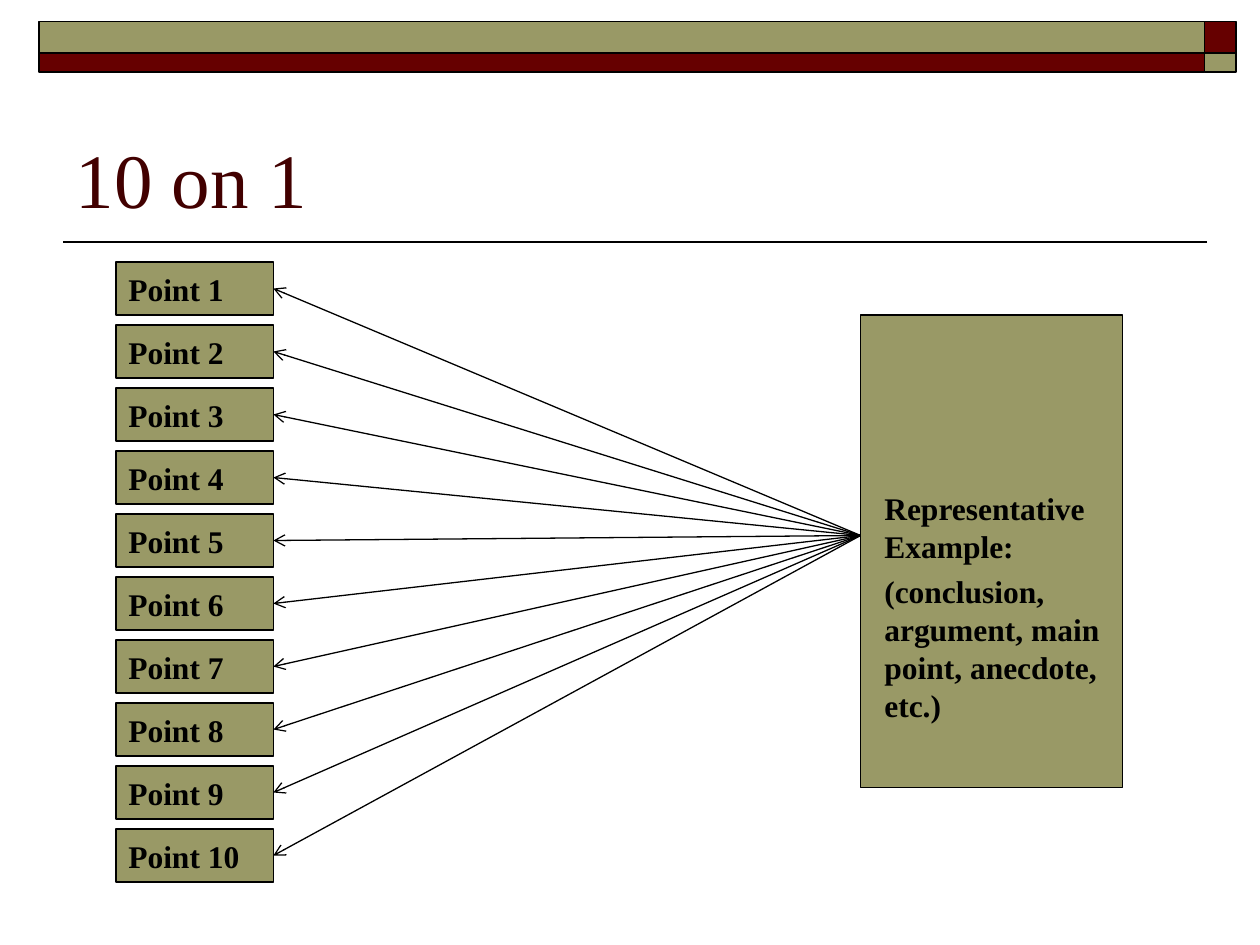
"""Build the "10 on 1" slide: ten points fanning out from one representative example."""

from typing import NamedTuple

import pptx
import pptx.dml.color
import pptx.enum.shapes
import pptx.enum.text
import pptx.oxml.ns
import pptx.shapes.autoshape
import pptx.shapes.connector
import pptx.slide
import pptx.text.text
import pptx.util
from lxml import etree
from pptx.util import Inches

OLIVE = pptx.dml.color.RGBColor(0x99, 0x99, 0x66)
MAROON = pptx.dml.color.RGBColor(0x66, 0x00, 0x00)
TITLE_MAROON = pptx.dml.color.RGBColor(0x42, 0x00, 0x00)
BLACK = pptx.dml.color.RGBColor(0x00, 0x00, 0x00)
FONT = "Times New Roman"
POINT_COUNT = 10
POINT_TOP = 2.08
POINT_PITCH = 0.5
FAN_ORIGIN = (6.83, 4.25)
ANCHOR = pptx.enum.text.MSO_ANCHOR


class Box(NamedTuple):
    left: float
    top: float
    width: float
    height: float


class Block(NamedTuple):
    box: Box
    fill: pptx.dml.color.RGBColor
    line_width: float


class Caption(NamedTuple):
    box: Box
    text: str
    anchor: pptx.enum.text.MSO_ANCHOR


BANNER = [
    Block(Box(9.56, 0.17, 0.25, 0.25), MAROON, 1),
    Block(Box(0.31, 0.17, 9.25, 0.25), OLIVE, 1),
    Block(Box(0.31, 0.42, 9.25, 0.15), MAROON, 1),
    Block(Box(9.56, 0.42, 0.25, 0.15), OLIVE, 1),
]
EXAMPLE_PANEL = Block(Box(6.83, 2.5, 2.08, 3.75), OLIVE, 0.75)
EXAMPLE_CAPTIONS = [
    Caption(
        Box(6.92, 4.17, 1.92, 1.62),
        "(conclusion, argument, main point, anecdote, etc.)",
        ANCHOR.BOTTOM,
    ),
    Caption(Box(6.92, 3.83, 1.92, 0.71), "Representative Example:", ANCHOR.TOP),
]


def write(
    frame: pptx.text.text.TextFrame,
    text: str,
    anchor: pptx.enum.text.MSO_ANCHOR,
    size: float = 18,
    color: pptx.dml.color.RGBColor = BLACK,
    bold: bool = True,
) -> None:
    frame.word_wrap = True
    frame.auto_size = pptx.enum.text.MSO_AUTO_SIZE.NONE
    frame.vertical_anchor = anchor
    paragraph = frame.paragraphs[0]
    paragraph.alignment = pptx.enum.text.PP_ALIGN.LEFT
    run = paragraph.add_run()
    run.text = text
    run.font.name = FONT
    run.font.size = pptx.util.Pt(size)
    run.font.bold = bold
    run.font.color.rgb = color


def draw_block(slide: pptx.slide.Slide, block: Block) -> pptx.shapes.autoshape.Shape:
    rectangle = slide.shapes.add_shape(
        pptx.enum.shapes.MSO_SHAPE.RECTANGLE, *map(Inches, block.box)
    )
    rectangle.shadow.inherit = False
    rectangle.fill.solid()
    rectangle.fill.fore_color.rgb = block.fill
    rectangle.line.color.rgb = BLACK
    rectangle.line.width = pptx.util.Pt(block.line_width)
    return rectangle


def draw_line(
    slide: pptx.slide.Slide,
    start: tuple[float, float],
    end: tuple[float, float],
    width: float,
) -> pptx.shapes.connector.Connector:
    line = slide.shapes.add_connector(
        pptx.enum.shapes.MSO_CONNECTOR.STRAIGHT, *map(Inches, start + end)
    )
    line.line.color.rgb = BLACK
    line.line.width = pptx.util.Pt(width)
    etree.SubElement(line._element.spPr, pptx.oxml.ns.qn("a:effectLst"))
    return line


def draw_arrow(slide: pptx.slide.Slide, point: pptx.shapes.autoshape.Shape) -> None:
    arrow = draw_line(slide, FAN_ORIGIN, FAN_ORIGIN, 0.75)
    arrow.end_connect(point, 3)
    outline = arrow.line._get_or_add_ln()
    etree.SubElement(outline, pptx.oxml.ns.qn("a:tailEnd"), type="arrow")


def draw_title(slide: pptx.slide.Slide, text: str) -> None:
    title = slide.shapes.title
    title.left, title.top = Inches(0.5), Inches(0.58)
    title.width, title.height = Inches(9), Inches(1.25)
    write(title.text_frame, text, ANCHOR.BOTTOM, 44, TITLE_MAROON, False)


def draw_point(slide: pptx.slide.Slide, index: int) -> pptx.shapes.autoshape.Shape:
    box = Box(0.92, POINT_TOP + index * POINT_PITCH, 1.25, 0.42)
    point = draw_block(slide, Block(box, OLIVE, 0.75))
    write(point.text_frame, f"Point {index + 1}", ANCHOR.MIDDLE)
    return point


def draw_caption(slide: pptx.slide.Slide, caption: Caption) -> None:
    textbox = slide.shapes.add_textbox(*map(Inches, caption.box))
    write(textbox.text_frame, caption.text, caption.anchor)


def main() -> None:
    presentation = pptx.Presentation()
    presentation.slide_width = Inches(10)
    presentation.slide_height = Inches(7.5)
    slide = presentation.slides.add_slide(presentation.slide_layouts[5])

    draw_line(slide, (9.58, 1.92), (0.5, 1.92), 1)
    for block in [*BANNER, EXAMPLE_PANEL]:
        draw_block(slide, block)
    draw_title(slide, "10 on 1")
    points = [draw_point(slide, index) for index in range(POINT_COUNT)]
    for point in points:
        draw_arrow(slide, point)
    for caption in EXAMPLE_CAPTIONS:
        draw_caption(slide, caption)

    presentation.save("out.pptx")


if __name__ == "__main__":
    main()
